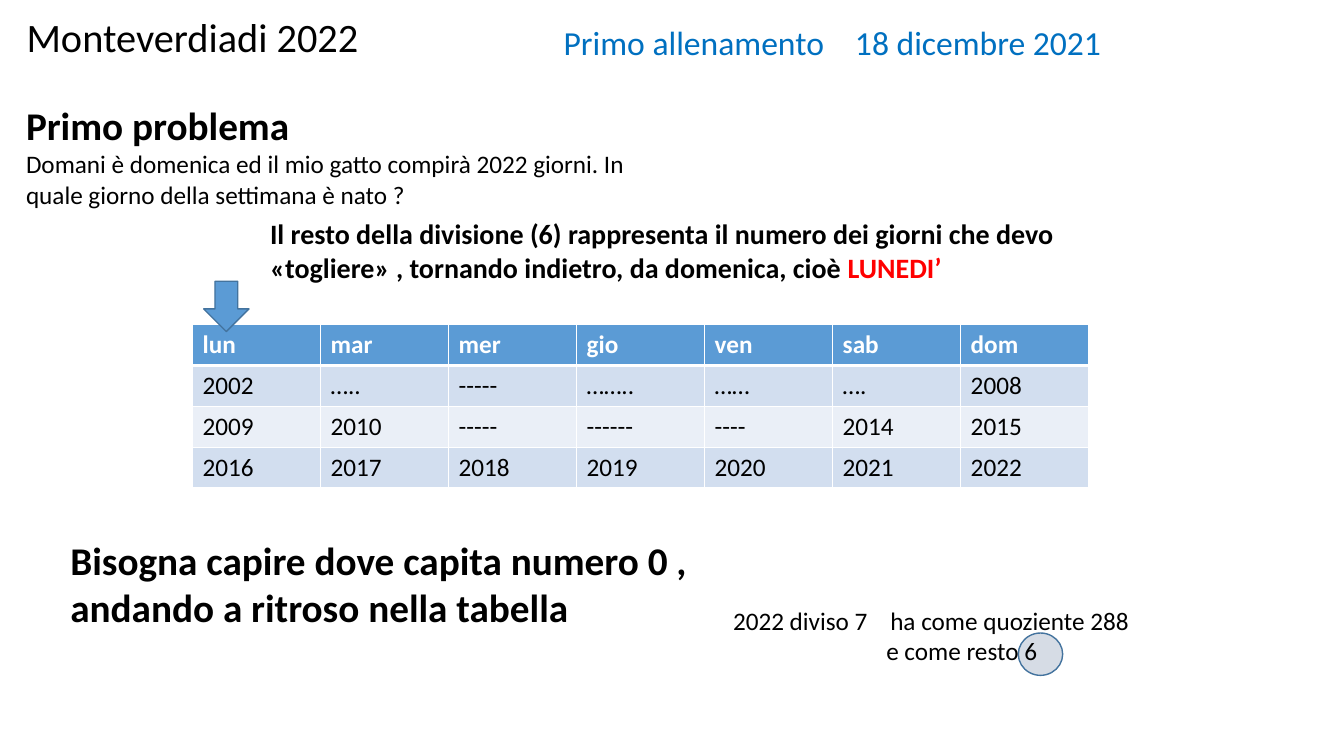
from dataclasses import dataclass

from lxml import etree
from pptx import Presentation
from pptx.dml.color import RGBColor
from pptx.enum.shapes import MSO_SHAPE
from pptx.enum.text import MSO_ANCHOR, PP_ALIGN
from pptx.oxml.ns import qn
from pptx.util import Inches, Pt

LEFT, CENTER = PP_ALIGN.LEFT, PP_ALIGN.CENTER
TOP, BOTTOM = MSO_ANCHOR.TOP, MSO_ANCHOR.BOTTOM
OVAL, DOWN_ARROW = MSO_SHAPE.OVAL, MSO_SHAPE.DOWN_ARROW


@dataclass(frozen=True)
class Theme:
    font: str = "Calibri"
    black: str = "000000"
    white: str = "FFFFFF"
    red: str = "FF0000"
    date_blue: str = "0070C0"
    accent: str = "5B9BD5"
    outline: str = "43739E"
    remainder: str = "D6DCE5"
    bands: tuple[str, str] = ("D2DEEF", "EAEFF7")
    title: float = 28.8
    heading: float = 28
    subtitle: float = 24
    answer: float = 20
    body: float = 18


THEME = Theme()


@dataclass(frozen=True)
class Box:
    left: float
    top: float
    width: float
    height: float

    def emu(self) -> tuple:
        return tuple(Inches(v) for v in (self.left, self.top, self.width, self.height))


@dataclass(frozen=True)
class Span:
    text: str
    size: float
    color: str = THEME.black
    bold: bool = False


@dataclass(frozen=True)
class Line:
    spans: tuple[Span, ...]
    align: PP_ALIGN = LEFT
    spacing: float = 1.0
    indent: float = 0
    tab: float = 0


@dataclass(frozen=True)
class Passage:
    box: Box
    lines: tuple[Line, ...]
    anchor: MSO_ANCHOR = TOP
    inset: tuple[float, float] = (0.1, 0.05)


@dataclass(frozen=True)
class Marker:
    kind: MSO_SHAPE
    box: Box
    fill: str


REMAINDER_CIRCLE = Marker(OVAL, Box(10.1, 6.28, 0.44, 0.42), THEME.remainder)
MONDAY_ARROW = Marker(DOWN_ARROW, Box(2.02, 2.79, 0.45, 0.5), THEME.accent)

PASSAGES = (
    Passage(Box(-0.11, 0.21, 4.04, 0.45), (
        Line((Span("Monteverdiadi 2022", THEME.title),), CENTER, 0.9),), BOTTOM),
    Passage(Box(4.96, 0.21, 6.58, 0.66), (
        Line((Span("Primo allenamento\t18 dicembre 2021", THEME.subtitle, THEME.date_blue),),
             spacing=0.9, tab=2.89),), inset=(0.63, 0.05)),
    Passage(Box(0.16, 0.96, 6.67, 1.18), (
        Line((Span("Primo problema", THEME.heading, bold=True),)),
        Line((Span("Domani è domenica ed il mio gatto compirà 2022 giorni. "
                   "In quale giorno della settimana è nato ?", THEME.body),)))),
    Passage(Box(0.6, 5.27, 6.67, 1.04), (
        Line((Span("Bisogna capire dove capita numero 0 , andando a ritroso nella tabella",
                   THEME.heading, bold=True),)),)),
    Passage(Box(7.27, 6, 3.98, 0.61), (
        Line((Span("2022 diviso 7\tha come quoziente 288", THEME.body),), tab=1.56),
        Line((Span("e come resto 6", THEME.body),), indent=1.52)), inset=(0, 0)),
    Passage(Box(2.58, 2.1, 8.26, 0.77), (
        Line((Span("Il resto della divisione (6) rappresenta il numero dei giorni che devo "
                   "«togliere» , tornando indietro, da domenica, cioè ",
                   THEME.answer, bold=True),
              Span("LUNEDI’", THEME.answer, THEME.red, True))),)),
)

WEEK_BOX = Box(1.91, 3.22, 8.89, 1.62)
WEEK_ROWS = (
    ("lun", "mar", "mer", "gio", "ven", "sab", "dom"),
    ("2002", "…..", "-----", "……..", "……", "….", "2008"),
    ("2009", "2010", "-----", "------", "----", "2014", "2015"),
    ("2016", "2017", "2018", "2019", "2020", "2021", "2022"),
)


def style_run(run, span: Span) -> None:
    """Apply a span's type settings to a run."""
    run.font.name = THEME.font
    run.font.size = Pt(span.size)
    run.font.bold = span.bold
    run.font.color.rgb = RGBColor.from_string(span.color)


def write_line(paragraph, line: Line) -> None:
    """Write the spans and layout of one paragraph."""
    paragraph.alignment = line.align
    paragraph.line_spacing = line.spacing
    properties = paragraph._p.get_or_add_pPr()
    if line.indent:
        properties.set("marL", str(Inches(line.indent)))
    if line.tab:
        stops = etree.SubElement(properties, qn("a:tabLst"))
        etree.SubElement(stops, qn("a:tab"), pos=str(Inches(line.tab)), algn="l")
    for span in line.spans:
        run = paragraph.add_run()
        run.text = span.text
        style_run(run, span)


def add_passage(slide, passage: Passage) -> None:
    """Add a wrapped text box."""
    frame = slide.shapes.add_textbox(*passage.box.emu()).text_frame
    frame.word_wrap = True
    frame.vertical_anchor = passage.anchor
    side, edge = passage.inset
    frame.margin_left = Inches(side)
    frame.margin_right = Inches(min(side, 0.1))
    frame.margin_top = frame.margin_bottom = Inches(edge)
    for index, line in enumerate(passage.lines):
        write_line(frame.add_paragraph() if index else frame.paragraphs[0], line)


def add_marker(slide, marker: Marker) -> None:
    """Add an outlined preset shape."""
    shape = slide.shapes.add_shape(marker.kind, *marker.box.emu())
    shape.shadow.inherit = False
    shape.fill.solid()
    shape.fill.fore_color.rgb = RGBColor.from_string(marker.fill)
    shape.line.color.rgb = RGBColor.from_string(THEME.outline)
    shape.line.width = Pt(1)


def add_borders(cell, row: int) -> None:
    """Draw white cell borders, thicker below the day names."""
    properties = cell._tc.get_or_add_tcPr()
    thick = {0: "lnB", 1: "lnT"}.get(row)
    for side in ("lnL", "lnR", "lnT", "lnB"):
        width = Pt(3 if side == thick else 1)
        border = etree.SubElement(properties, qn(f"a:{side}"), w=str(width))
        fill = etree.SubElement(border, qn("a:solidFill"))
        etree.SubElement(fill, qn("a:srgbClr"), val=THEME.white)


def add_week_table(slide) -> None:
    """Add the table counting the days back from Sunday."""
    columns = len(WEEK_ROWS[0])
    table = slide.shapes.add_table(len(WEEK_ROWS), columns, *WEEK_BOX.emu()).table
    for column in table.columns:
        column.width = Inches(WEEK_BOX.width / columns)
    for row, texts in enumerate(WEEK_ROWS):
        header = row == 0
        fill = THEME.accent if header else THEME.bands[(row - 1) % 2]
        color = THEME.white if header else THEME.black
        for column, text in enumerate(texts):
            cell = table.cell(row, column)
            add_borders(cell, row)
            cell.fill.solid()
            cell.fill.fore_color.rgb = RGBColor.from_string(fill)
            cell.text_frame.text = text
            style_run(cell.text_frame.paragraphs[0].runs[0],
                      Span(text, THEME.body, color, header))


def main() -> None:
    """Build and save the slide."""
    deck = Presentation()
    deck.slide_width, deck.slide_height = Inches(13.33), Inches(7.5)
    slide = deck.slides.add_slide(deck.slide_layouts[6])
    add_marker(slide, REMAINDER_CIRCLE)
    add_week_table(slide)
    add_marker(slide, MONDAY_ARROW)
    for passage in PASSAGES:
        add_passage(slide, passage)
    deck.save("out.pptx")


if __name__ == "__main__":
    main()
